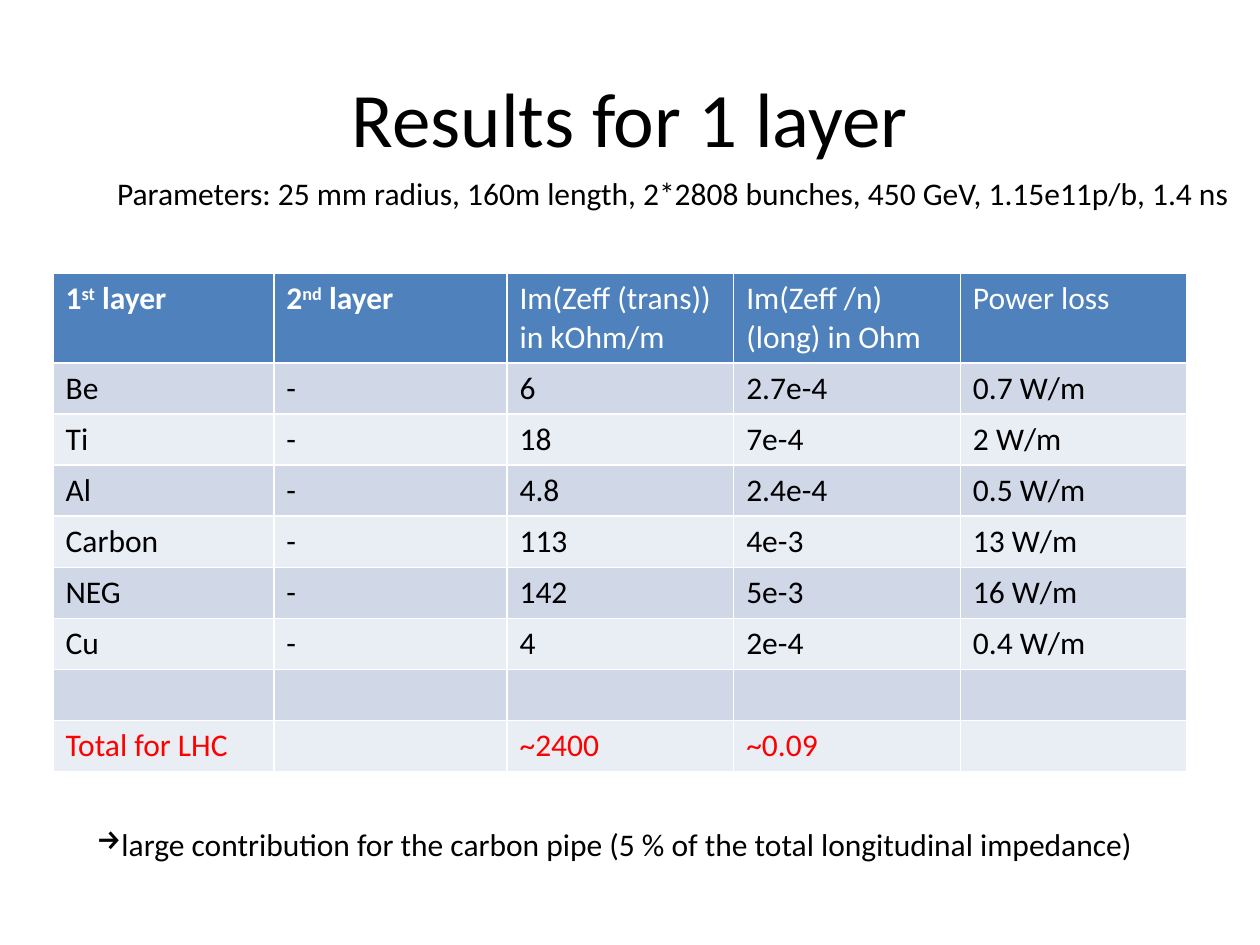
from lxml import etree
from pptx import Presentation
from pptx.dml.color import RGBColor
from pptx.enum.text import MSO_ANCHOR, MSO_AUTO_SIZE, PP_ALIGN
from pptx.oxml.ns import qn
from pptx.util import Cm, Pt

MIDDLE = MSO_ANCHOR.MIDDLE
CENTER = PP_ALIGN.CENTER
FIT_SHAPE = MSO_AUTO_SIZE.SHAPE_TO_FIT_TEXT

FONT = "Calibri"
BLACK, WHITE, RED = "000000", "FFFFFF", "FF0000"
HEADER_FILL = "4F81BD"
BAND_FILLS = ("D0D8E8", "E9EDF4")

TITLE = "Results for 1 layer"
PARAMETERS = ("Parameters: 25 mm radius, 160m length, 2*2808 bunches, "
              "450 GeV, 1.15e11p/b, 1.4 ns")
CONCLUSION = ("large contribution for the carbon pipe "
              "(5 % of the total longitudinal impedance)")

# A header is a list of spans; every second span is superscript.
HEADERS = [
    ["1", "st", " layer"],
    ["2", "nd", " layer"],
    ["Im(Zeff (trans))\vin kOhm/m"],
    ["Im(Zeff /n) (long) in Ohm"],
    ["Power loss"],
]
ROWS = [
    ["Be", "-", "6", "2.7e-4", "0.7 W/m"],
    ["Ti", "-", "18", "7e-4", "2 W/m"],
    ["Al", "-", "4.8", "2.4e-4", "0.5 W/m"],
    ["Carbon", "-", "113", "4e-3", "13 W/m"],
    ["NEG", "-", "142", "5e-3", "16 W/m"],
    ["Cu", "-", "4", "2e-4", "0.4 W/m"],
    ["", "", "", "", ""],
    ["Total for LHC", "", "~2400", "~0.09", ""],
]
COLUMN_WIDTHS = [4.45, 4.7, 4.57, 4.57, 4.57]
HEADER_HEIGHT, ROW_HEIGHT = 1.76, 1.03


def rgb(color):
    return RGBColor.from_string(color)


def style(paragraph, color=BLACK, size=18, bold=False):
    font = paragraph.font
    font.name, font.size, font.bold = FONT, Pt(size), bold
    font.color.rgb = rgb(color)


def fill_cell(cell, color):
    cell.fill.solid()
    cell.fill.fore_color.rgb = rgb(color)


def add_title(page):
    title = page.shapes.title
    title.left, title.top = Cm(1.27), Cm(0.76)
    title.width, title.height = Cm(22.86), Cm(3.17)
    title.text_frame.text = TITLE
    title.text_frame.vertical_anchor = MIDDLE
    paragraph = title.text_frame.paragraphs[0]
    paragraph.alignment = CENTER
    style(paragraph, size=44)


def add_line(page, text, left, top, width):
    """Add one unwrapped line of text and return its paragraph."""
    box = page.shapes.add_textbox(Cm(left), Cm(top), Cm(width), Cm(ROW_HEIGHT))
    frame = box.text_frame
    frame.word_wrap = False
    frame.auto_size = FIT_SHAPE
    frame.text = text
    style(frame.paragraphs[0])
    return frame.paragraphs[0]


def add_bullet(paragraph, symbol):
    properties = paragraph._p.get_or_add_pPr()
    bullet = etree.Element(qn("a:buChar"), char=symbol)
    properties.insert(0, bullet)


def add_results(page):
    height = HEADER_HEIGHT + ROW_HEIGHT * len(ROWS)
    table = page.shapes.add_table(
        len(ROWS) + 1, len(HEADERS), Cm(1.07), Cm(5.51),
        Cm(sum(COLUMN_WIDTHS)), Cm(height)).table
    for column, width in zip(table.columns, COLUMN_WIDTHS):
        column.width = Cm(width)
    for row in table.rows:
        row.height = Cm(ROW_HEIGHT)
    table.rows[0].height = Cm(HEADER_HEIGHT)

    for column, spans in enumerate(HEADERS):
        cell = table.cell(0, column)
        fill_cell(cell, HEADER_FILL)
        paragraph = cell.text_frame.paragraphs[0]
        if len(spans) == 1:
            cell.text_frame.text = spans[0]
        else:
            for index, text in enumerate(spans):
                span = paragraph.add_run()
                span.text = text
                if index % 2:
                    span._r.get_or_add_rPr().set("baseline", "30000")
        style(paragraph, WHITE, bold=True)

    for number, values in enumerate(ROWS):
        color = RED if values is ROWS[-1] else BLACK
        for column, value in enumerate(values):
            cell = table.cell(number + 1, column)
            fill_cell(cell, BAND_FILLS[number % 2])
            cell.text_frame.text = value
            style(cell.text_frame.paragraphs[0], color)


def main():
    deck = Presentation()
    deck.slide_width, deck.slide_height = Cm(25.4), Cm(19.05)
    page = deck.slides.add_slide(deck.slide_layouts.get_by_name("Title Only"))
    add_title(page)
    add_results(page)
    add_line(page, PARAMETERS, 2.11, 3.38, 23.19)
    add_bullet(add_line(page, CONCLUSION, 1.7, 16.51, 21.79), "→")
    deck.save("out.pptx")


if __name__ == "__main__":
    main()
